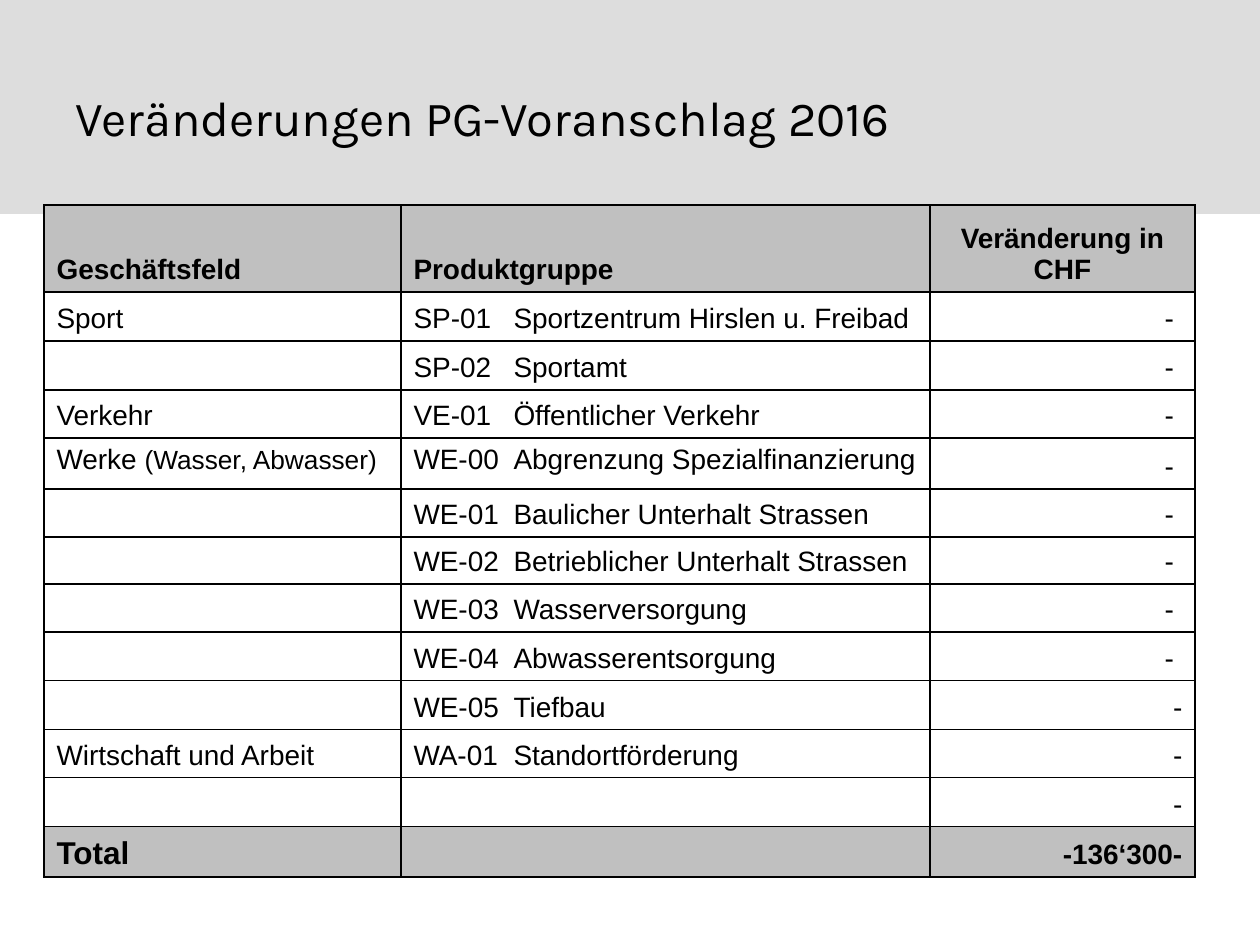
from dataclasses import dataclass
from lxml.etree import SubElement as Sub
from pptx import Presentation
from pptx.dml.color import RGBColor as Rgb
from pptx.enum.shapes import MSO_SHAPE as Form
from pptx.enum.text import MSO_ANCHOR as Anchor, PP_ALIGN as Align
from pptx.oxml.ns import qn
from pptx.util import Pt


@dataclass(frozen=True)
class Theme:
    ink: str = "000000"
    band: str = "DDDDDD"
    head: str = "C0C0C0"
    title: int = 28
    total: int = 18
    body: int = 16
    note: int = 15
    face: str = "Arial"
    show: str = "Karla"


LOOK = Theme()
COLS = [357, 529, 265]
HIGH = [87, 49, 49, 48, 51, 48, 47, 48, 49, 49, 48, 49, 49]
ROWS = [
    ("Geschäftsfeld", "Produktgruppe", "Veränderung in CHF"),
    ("Sport", "SP-01\tSportzentrum Hirslen u. Freibad", "-"),
    ("", "SP-02\tSportamt", "-"),
    ("Verkehr", "VE-01\tÖffentlicher Verkehr", "-"),
    ("Werke ", "WE-00\tAbgrenzung Spezialfinanzierung", "-"),
    ("", "WE-01\tBaulicher Unterhalt Strassen", "-"),
    ("", "WE-02\tBetrieblicher Unterhalt Strassen", "-"),
    ("", "WE-03\tWasserversorgung", "-"),
    ("", "WE-04\tAbwasserentsorgung", "-"),
    ("", "WE-05\tTiefbau", "-"),
    ("Wirtschaft und Arbeit", "WA-01\tStandortförderung", "-"),
    ("", "", "-"),
    ("Total", "", "-136‘300-"),
]
LAST = len(ROWS) - 1
WORKS = 4
INSET = range(1, 9)


def px(num):
    return round(num * 914400 / 126)


def style(para, size, face, bold=False):
    font = para.font
    font.size, font.name, font.bold = Pt(size), face, bold
    font.color.rgb = Rgb.from_string(LOOK.ink)


def header(slide, box):
    left, top, wide, high = box
    band = slide.shapes.add_shape(Form.RECTANGLE, *map(px, box))
    band.shadow.inherit = False
    band.fill.solid()
    band.fill.fore_color.rgb = Rgb.from_string(LOOK.band)
    band.line.fill.background()
    area = (left + 63, top + 38, wide - 126, high - 56)
    frame = slide.shapes.add_textbox(*map(px, area)).text_frame
    frame.word_wrap = True
    frame.vertical_anchor = Anchor.MIDDLE
    para = frame.paragraphs[0]
    para.text = "Veränderungen PG-Voranschlag 2016"
    style(para, LOOK.title, LOOK.show)


def border(cell):
    props = cell._tc.get_or_add_tcPr()
    for side in ("lnL", "lnR", "lnT", "lnB"):
        line = Sub(props, qn("a:" + side), w=str(Pt(1)))
        fill = Sub(line, qn("a:solidFill"))
        Sub(fill, qn("a:srgbClr"), val=LOOK.ink)


def tab(para, place):
    stops = Sub(para._p.get_or_add_pPr(), qn("a:tabLst"))
    Sub(stops, qn("a:tab"), pos=str(px(place)), algn="l")


def paint(cell, row, col, text):
    strong = row in (0, LAST)
    border(cell)
    if strong:
        cell.fill.solid()
        cell.fill.fore_color.rgb = Rgb.from_string(LOOK.head)
    else:
        cell.fill.background()
    top = row == WORKS and col < 2
    cell.vertical_anchor = Anchor.TOP if top else Anchor.BOTTOM
    if col == 2 and row in INSET:
        cell.margin_right = px(21)
    para = cell.text_frame.paragraphs[0]
    if text:
        para.text = text
    if col == 2:
        para.alignment = Align.RIGHT if row else Align.CENTER
    if "\t" in text:
        tab(para, 100)
    size = LOOK.total if (row, col) == (LAST, 0) else LOOK.body
    style(para, size, LOOK.face, strong)
    if (row, col) == (WORKS, 0):
        run = para.add_run()
        run.text = "(Wasser, Abwasser)"
        run.font.size = Pt(LOOK.note)


def budget(slide, left, top):
    box = (left, top, sum(COLS), sum(HIGH))
    table = slide.shapes.add_table(len(ROWS), len(COLS), *map(px, box)).table
    table.first_row = table.horz_banding = False
    for col, wide in zip(table.columns, COLS):
        col.width = px(wide)
    for row, high in zip(table.rows, HIGH):
        row.height = px(high)
    for row, texts in enumerate(ROWS):
        for col, text in enumerate(texts):
            paint(table.cell(row, col), row, col, text)


def main():
    deck = Presentation()
    deck.slide_width, deck.slide_height = px(1260), px(945)
    slide = deck.slides.add_slide(deck.slide_layouts[6])
    header(slide, (0, 0, 1260, 214))
    budget(slide, 44, 205)
    deck.save("out.pptx")


if __name__ == "__main__":
    main()
